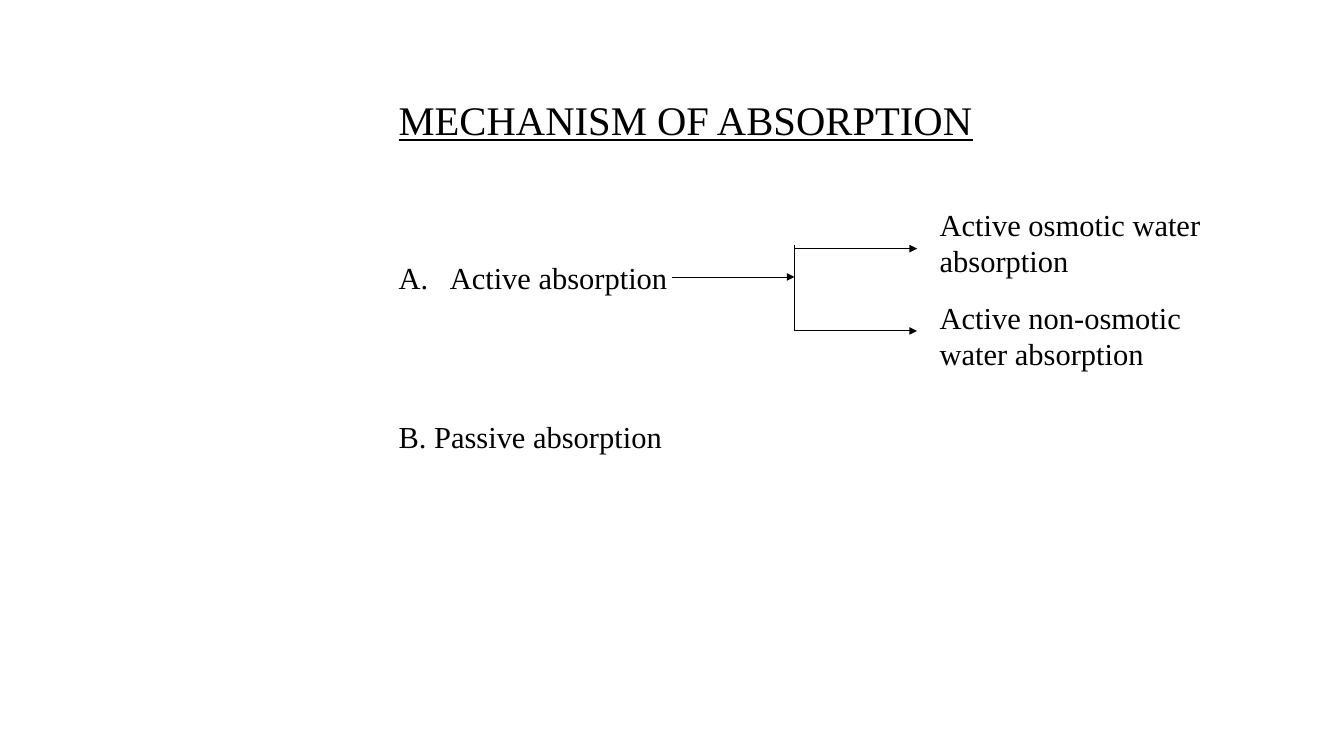
import pptx
import pptx.dml.color
import pptx.enum.shapes
import pptx.enum.text
import pptx.oxml
import pptx.oxml.ns
import pptx.util
from lxml import etree

PX = 9144  # EMU per px, 100 px to the inch
BLACK = pptx.dml.color.RGBColor(0, 0, 0)
WHITE = pptx.dml.color.RGBColor(255, 255, 255)
FONT = "Times New Roman"
TEXT_SIZE = 24
TIGHT = 0.93


def add_text_box(page, left, top, width, height, margins):
    box = page.shapes.add_textbox(left * PX, top * PX, width * PX, height * PX)
    frame = box.text_frame
    frame.word_wrap = True
    (frame.margin_left, frame.margin_top,
     frame.margin_right, frame.margin_bottom) = [m * PX for m in margins]
    return frame


def set_font(para, size=TEXT_SIZE):
    para.font.name = FONT
    para.font.size = pptx.util.Pt(size)
    para.font.color.rgb = BLACK


def number_paragraph(para, indent):
    """Letter the paragraph A., B., ... with a hanging indent in px."""
    props = para._p.get_or_add_pPr()
    props.set("marL", str(indent * PX))
    props.set("indent", str(-indent * PX))
    color = etree.SubElement(props, pptx.oxml.ns.qn("a:buClr"))
    etree.SubElement(color, pptx.oxml.ns.qn("a:srgbClr"), val=str(BLACK))
    etree.SubElement(props, pptx.oxml.ns.qn("a:buFont"), typeface=FONT)
    etree.SubElement(props, pptx.oxml.ns.qn("a:buAutoNum"), type="alphaUcPeriod")


def add_line(page, start, end, arrow=True):
    line = page.shapes.add_connector(
        pptx.enum.shapes.MSO_CONNECTOR.STRAIGHT,
        *[value * PX for value in (*start, *end)])
    line.line.color.rgb = BLACK
    line.line.width = pptx.util.Pt(0.75)
    if arrow:
        etree.SubElement(line.line._get_or_add_ln(),
                         pptx.oxml.ns.qn("a:tailEnd"), type="triangle")
    etree.SubElement(line._element.spPr, pptx.oxml.ns.qn("a:effectLst"))


def add_title(page, left, top, width, height):
    frame = add_text_box(page, left, top, width, height, (0, 0, 0, 0))
    frame.vertical_anchor = pptx.enum.text.MSO_ANCHOR.MIDDLE
    para = frame.paragraphs[0]
    para.text = "MECHANISM OF ABSORPTION"
    para.alignment = pptx.enum.text.PP_ALIGN.CENTER
    para.line_spacing = TIGHT
    set_font(para, 32)
    para.font.underline = True


def add_types(page, left, top, width, height):
    frame = add_text_box(page, left, top, width, height, (0, 3, 0, 0))
    active = frame.paragraphs[0]
    active.text = "Active absorption"
    number_paragraph(active, 56)
    passive = frame.add_paragraph()
    passive.text = "B. Passive absorption"
    passive.space_before = pptx.util.Pt(98)
    for para in (active, passive):
        para.line_spacing = TIGHT
        set_font(para)


def add_branches(page, left, top, width, height):
    """Arrow into a vertical bar, from which an arrow leads to each kind."""
    reach = width // 2
    bar = left + reach
    bottom = top + height
    add_line(page, (left, top + 35), (bar, top + 35))
    add_line(page, (bar, top), (bar, bottom), arrow=False)
    for y in (bottom, top + 4):
        add_line(page, (bar, y), (bar + reach, y))


def add_active_kinds(page, left, top, width, height):
    kinds = ("Active osmotic water absorption",
             "Active non-osmotic water absorption")
    pitch = 102
    for row, kind in enumerate(kinds):
        frame = add_text_box(page, left, top + row * pitch, width,
                             height - pitch, (10, 5, 10, 5))
        para = frame.paragraphs[0]
        para.text = kind
        set_font(para)


def main():
    deck = pptx.Presentation()
    deck.slide_width, deck.slide_height = 1470 * PX, 827 * PX
    page = deck.slides.add_slide(deck.slide_layouts[6])
    page.background.fill.solid()
    page.background.fill.fore_color.rgb = WHITE

    add_title(page, 420, 64, 660, 138)
    add_types(page, 436, 284, 472, 479)
    add_branches(page, 735, 268, 268, 94)
    add_active_kinds(page, 1018, 220, 307, 193)
    deck.save("out.pptx")


if __name__ == "__main__":
    main()
